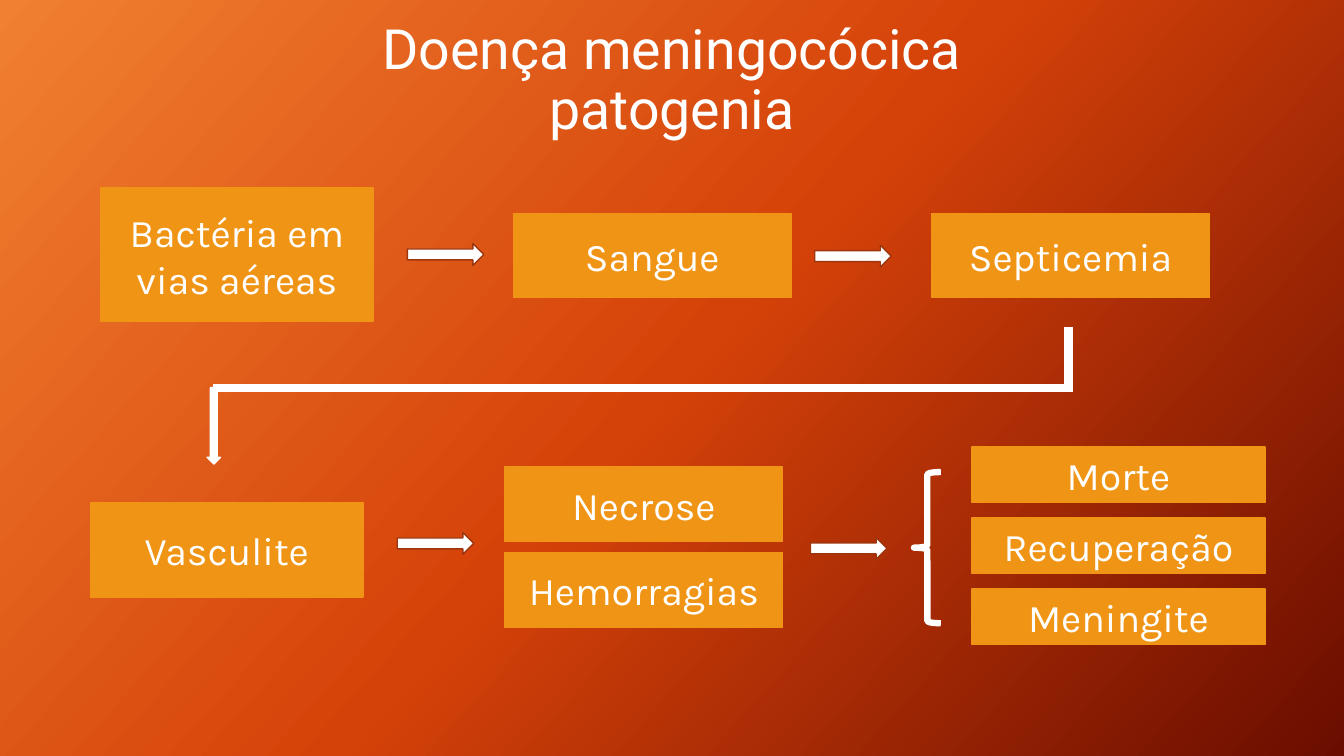
"""Build the slide on the pathogenesis of meningococcal disease."""
from copy import deepcopy

from pptx import Presentation
from pptx.dml.color import RGBColor
from pptx.enum.shapes import MSO_CONNECTOR, MSO_SHAPE
from pptx.enum.text import MSO_ANCHOR, MSO_AUTO_SIZE, PP_ALIGN
from pptx.oxml.ns import qn
from pptx.util import Inches, Pt

RECTANGLE = MSO_SHAPE.RECTANGLE
RIGHT_ARROW = MSO_SHAPE.RIGHT_ARROW
LEFT_BRACE = MSO_SHAPE.LEFT_BRACE
STRAIGHT = MSO_CONNECTOR.STRAIGHT
MIDDLE = MSO_ANCHOR.MIDDLE
NO_AUTOFIT = MSO_AUTO_SIZE.NONE
CENTER = PP_ALIGN.CENTER

THEME = {
    "background": [(0, "F18031"), (0.5, "D54209"), (1, "6A0D00")],
    "box": "F09415",
    "arrow_line": "9D360E",
    "white": "FFFFFF",
    "title": {"name": "Roboto", "size": Pt(39.6)},
    "label": {"name": "Karla", "size": Pt(28)},
}

deck = Presentation()
deck.slide_width, deck.slide_height = Inches(13.333), Inches(7.5)
COLUMN, ROW = deck.slide_width / 160, deck.slide_height / 90
slide = deck.slides.add_slide(deck.slide_layouts[5])


def add_figure(kind, left, top, width, height, fill, line, weight=1):
    """Add a preset shape placed in columns and rows."""
    figure = slide.shapes.add_shape(
        kind, round(left * COLUMN), round(top * ROW), round(width * COLUMN), round(height * ROW))
    figure.shadow.inherit = False
    if fill:
        figure.fill.solid()
        figure.fill.fore_color.rgb = RGBColor.from_string(fill)
    else:
        figure.fill.background()
    figure.line.color.rgb = RGBColor.from_string(line)
    figure.line.width = Pt(weight)
    return figure


def format_text(frame, style, line_spacing):
    """Centre the text of a frame and give it a type style."""
    frame.word_wrap = True
    frame.vertical_anchor = MIDDLE
    for para in frame.paragraphs:
        para.alignment = CENTER
        para.line_spacing = line_spacing
        for span in para.runs:
            for name, value in style.items():
                setattr(span.font, name, value)
            span.font.color.rgb = RGBColor.from_string(THEME["white"])


background = slide.background.fill
background.gradient()
background.gradient_angle = 318
stop_list = slide.element.find(".//" + qn("a:gsLst"))
stop_list.append(deepcopy(stop_list[0]))
for stop, (position, colour) in zip(background.gradient_stops, THEME["background"]):
    stop.position = position
    stop.color.rgb = RGBColor.from_string(colour)

title = slide.shapes.title
title_place = {
    "left": 12.6 * COLUMN, "top": 1.6 * ROW, "width": 134.8 * COLUMN, "height": 16.2 * ROW}
for name, value in title_place.items():
    setattr(title, name, round(value))
title_frame = title.text_frame
title_frame.auto_size = NO_AUTOFIT
for side in ("left", "top", "right", "bottom"):
    setattr(title_frame, "margin_" + side, Inches(0.1))
title_para = title_frame.paragraphs[0]
title_para.add_run().text = "Doença meningocócica"
title_para.add_line_break()
title_para.add_run().text = "patogenia"
format_text(title_frame, THEME["title"], 0.9)

boxes = [
    ("Bactéria em vias aéreas", 12, 22.4, 32.4, 15.9),
    ("Sangue", 61.1, 25.4, 33.1, 10),
    ("Septicemia", 110.9, 25.4, 33.1, 10),
    ("Vasculite", 10.8, 59.8, 32.4, 11.3),
]
for index, label in enumerate(["Necrose", "Hemorragias"]):
    boxes.append((label, 60.1, 55.6 + 10.2 * index, 33.1, 8.9))
for index, label in enumerate(["Morte", "Recuperação", "Meningite"]):
    boxes.append((label, 115.7, 53.2 + 8.45 * index, 34.9, 6.6))
for label, *place in boxes:
    box = add_figure(RECTANGLE, *place, THEME["box"], THEME["box"])
    box.text_frame.text = label
    format_text(box.text_frame, THEME["label"], 1)

for left, top in [(48.5, 29), (97, 29.2), (47.3, 63.4), (96.5, 64)]:
    add_figure(RIGHT_ARROW, left, top, 9.1, 2.6, THEME["white"], THEME["arrow_line"])

add_figure(LEFT_BRACE, 108.8, 56.2, 3.2, 18, None, THEME["white"], 4.5)

for ends in [(127.2, 38.9, 127.2, 46.4), (127.7, 46.2, 25.3, 46.2)]:
    points = [round(end * unit) for end, unit in zip(ends, (COLUMN, ROW) * 2)]
    connector = slide.shapes.add_connector(STRAIGHT, *points)
    connector.line.color.rgb = RGBColor.from_string(THEME["white"])
    connector.line.width = Pt(6)
    properties = connector.element.spPr
    properties.append(properties.makeelement(qn("a:effectLst"), {}))

down_arrow = add_figure(RIGHT_ARROW, 20.9, 49.9, 9.1, 1.6, THEME["white"], THEME["white"])
down_arrow.rotation = 90

deck.save("out.pptx")
